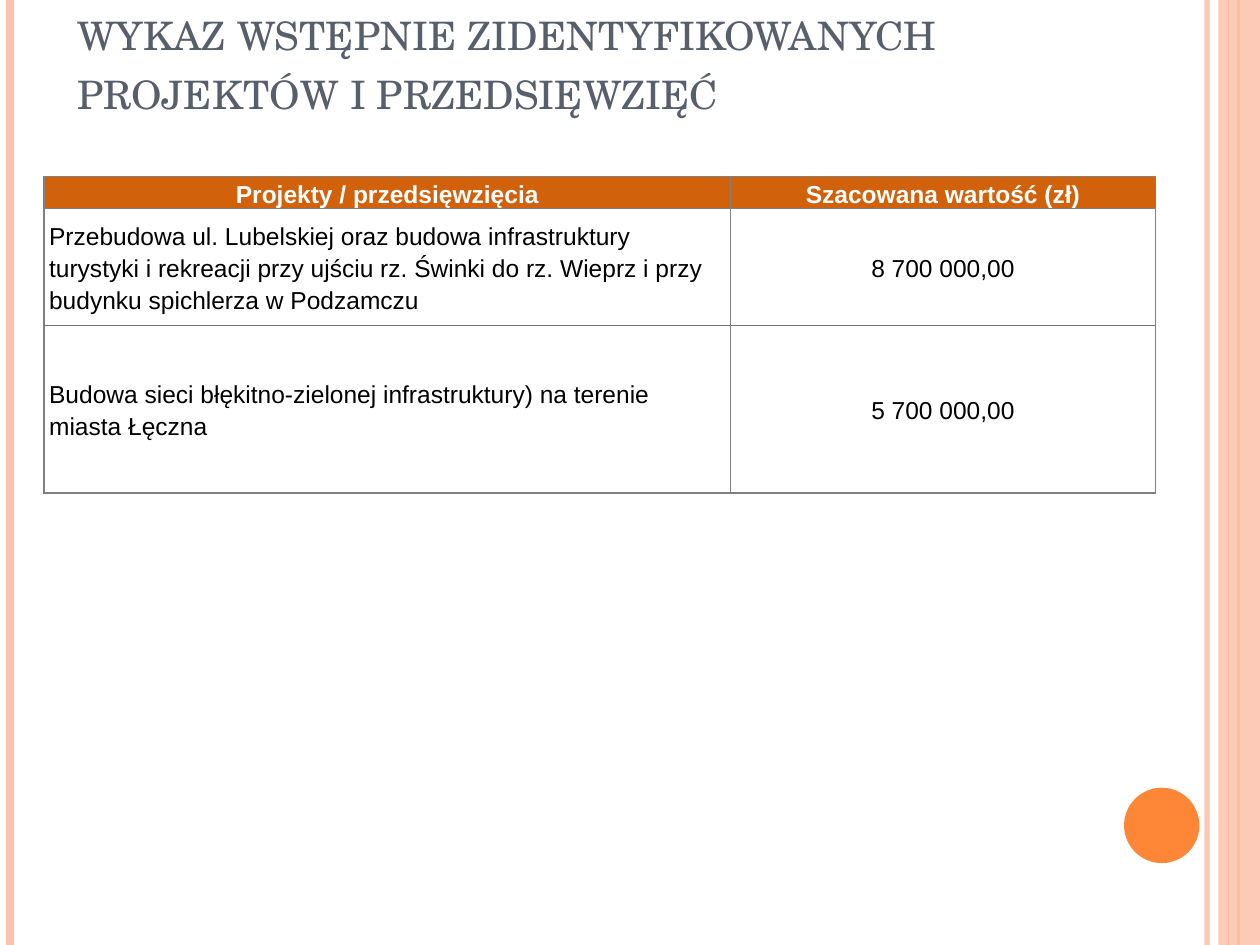
import pptx
import pptx.dml.color
import pptx.enum.shapes
import pptx.enum.text
import pptx.oxml.ns
import pptx.oxml.xmlchemy
import pptx.util
from lxml import etree

Cm = pptx.util.Cm
Pt = pptx.util.Pt
qn = pptx.oxml.ns.qn
MIDDLE = pptx.enum.text.MSO_ANCHOR.MIDDLE
LEFT = pptx.enum.text.PP_ALIGN.LEFT
CENTER = pptx.enum.text.PP_ALIGN.CENTER

COLORS = {
    "peach": "FEC3AE",
    "orange": "FE8637",
    "title": "575F6D",
    "header": "D2610C",
    "white": "FFFFFF",
    "black": "000000",
    "border": "808080",
    "divider": "80716A",
}


def rgb(name):
    return pptx.dml.color.RGBColor.from_string(COLORS[name])


def set_opacity(element, percent):
    color = element.find(".//" + qn("a:srgbClr"))
    etree.SubElement(color, qn("a:alpha"), val=str(percent * 1000))


presentation = pptx.Presentation()
presentation.slide_width = Cm(25.4)
presentation.slide_height = Cm(19.05)
slide = presentation.slides.add_slide(presentation.slide_layouts[5])

stripes = [
    (24.33, "peach", 3, 93),
    (0.2, "peach", 4.5, 100),
    (24.97, "orange", 1.5, 100),
    (24.77, "orange", 0.75, 100),
]
for x, color, width, opacity in stripes:
    stripe = slide.shapes.add_connector(
        pptx.enum.shapes.MSO_CONNECTOR.STRAIGHT, Cm(x), 0, Cm(x), Cm(19.05))
    stripe.line.color.rgb = rgb(color)
    stripe.line.width = Pt(width)
    if opacity < 100:
        set_opacity(stripe.line._ln, opacity)
    etree.SubElement(stripe._element.spPr, qn("a:effectLst"))

decorations = [
    (pptx.enum.shapes.MSO_SHAPE.RECTANGLE, 24.56, 0, 0.84, 19.05, "peach", 87),
    (pptx.enum.shapes.MSO_SHAPE.OVAL, 22.66, 15.88, 1.52, 1.52, "orange", 100),
]
for kind, left, top, width, height, color, opacity in decorations:
    shape = slide.shapes.add_shape(kind, Cm(left), Cm(top), Cm(width), Cm(height))
    shape.shadow.inherit = False
    shape.fill.solid()
    shape.fill.fore_color.rgb = rgb(color)
    shape.line.fill.background()
    if opacity < 100:
        set_opacity(shape._element.spPr, opacity)

title = slide.shapes.title
title.left, title.top, title.width, title.height = Cm(1.3), Cm(0.91), Cm(23.01), Cm(1.63)
title.text_frame.text = "wykaz wstępnie zidentyfikowanych projektów i przedsięwzięć"
title.text_frame.word_wrap = True
title.text_frame.auto_size = pptx.enum.text.MSO_AUTO_SIZE.NONE
title.text_frame.vertical_anchor = pptx.enum.text.MSO_ANCHOR.BOTTOM
paragraph = title.text_frame.paragraphs[0]
paragraph.alignment = LEFT
paragraph.font.name = "TeX Gyre Schola"
paragraph.font.size = Pt(28)
paragraph.font.color.rgb = rgb("title")
paragraph._p.pPr.find(qn("a:defRPr")).set("cap", "small")

projects = [
    ("Projekty / przedsięwzięcia", "Szacowana wartość (zł)"),
    ("Przebudowa ul. Lubelskiej oraz budowa infrastruktury turystyki i rekreacji "
     "przy ujściu rz. Świnki do rz. Wieprz i przy budynku spichlerza w Podzamczu",
     "8 700 000,00"),
    ("Budowa sieci błękitno-zielonej infrastruktury) na terenie miasta Łęczna",
     "5 700 000,00"),
]
column_widths = [13.84, 8.56]
row_heights = [0.62, 2.36, 3.38]
table = slide.shapes.add_table(
    len(projects), 2, Cm(0.89), Cm(3.56),
    Cm(sum(column_widths)), Cm(sum(row_heights))).table
for column, width in zip(table.columns, column_widths):
    column.width = Cm(width)
for row, height in zip(table.rows, row_heights):
    row.height = Cm(height)

for row_index, texts in enumerate(projects):
    is_header = row_index == 0
    for column_index, text in enumerate(texts):
        cell = table.cell(row_index, column_index)
        cell.text = text
        cell.vertical_anchor = MIDDLE
        cell.margin_left = cell.margin_right = Cm(0.1)
        cell.margin_top = cell.margin_bottom = 0

        paragraph = cell.text_frame.paragraphs[0]
        paragraph.alignment = CENTER if is_header or column_index == 1 else LEFT
        paragraph.line_spacing = 1.15
        paragraph.font.name = "Arial"
        paragraph.font.size = Pt(14)
        paragraph.font.bold = is_header
        paragraph.font.color.rgb = rgb("white" if is_header else "black")

        properties = cell._tc.get_or_add_tcPr()
        for side in ("L", "R", "T", "B"):
            is_divider = (row_index, side) in ((1, "B"), (2, "T"))
            border = etree.SubElement(properties, qn("a:ln" + side), w=str(Pt(1)))
            fill = etree.SubElement(border, qn("a:solidFill"))
            etree.SubElement(fill, qn("a:srgbClr"),
                             val=COLORS["divider" if is_divider else "border"])
        if is_header:
            cell.fill.solid()
            cell.fill.fore_color.rgb = rgb("header")
        else:
            cell.fill.background()

presentation.save("out.pptx")
